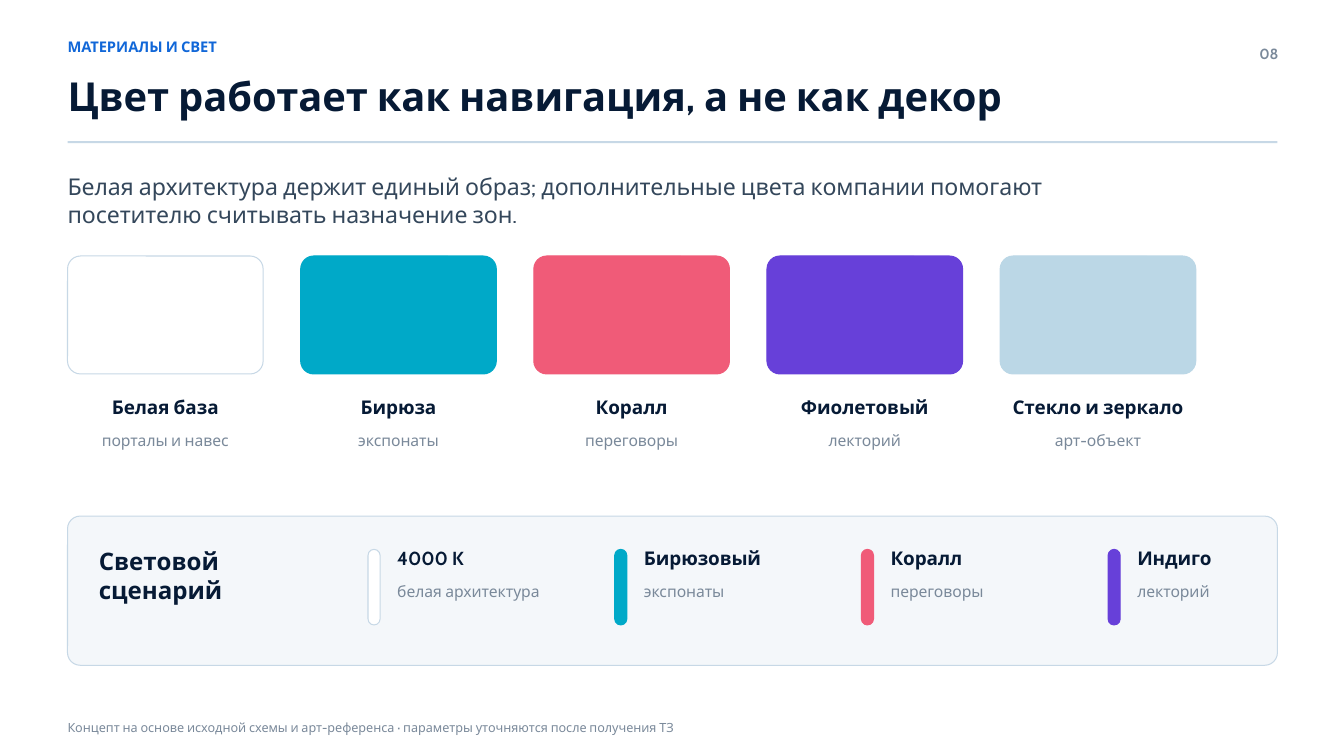
from dataclasses import dataclass

from pptx import Presentation
from pptx.dml.color import RGBColor
from pptx.enum.shapes import MSO_SHAPE
from pptx.enum.text import MSO_ANCHOR, MSO_AUTO_SIZE, PP_ALIGN
from pptx.util import Inches, Pt


@dataclass(frozen=True)
class Theme:
    font: str = "Cabin"
    # Colours
    white: str = "FFFFFF"
    ink: str = "061A35"
    body: str = "34475B"
    muted: str = "7A899A"
    blue: str = "1167D8"
    rule: str = "C7D8E6"
    panel: str = "F4F7FA"
    teal: str = "00A9C8"
    coral: str = "F05B78"
    violet: str = "6740D9"
    glass: str = "BBD7E6"
    # Type sizes
    title: float = 28.5
    lead: float = 16.5
    head: float = 17.2
    name: float = 13.5
    note: float = 11.2
    label: float = 10.5
    foot: float = 9


theme = Theme()
deck = Presentation()
deck.slide_width, deck.slide_height = Inches(13.33), Inches(7.5)
slide = deck.slides.add_slide(deck.slide_layouts[5])
shapes = slide.shapes


def write(text, area, size, color, bold=False, align=PP_ALIGN.LEFT, box=None):
    left, top, width, height = map(Inches, area)
    if box is None:
        box = shapes.add_textbox(left, top, width, height)
    else:
        box.left, box.top, box.width, box.height = left, top, width, height
    frame = box.text_frame
    frame.text = text
    frame.word_wrap = True
    frame.auto_size = MSO_AUTO_SIZE.NONE
    frame.vertical_anchor = MSO_ANCHOR.TOP
    frame.margin_left = frame.margin_right = 0
    frame.margin_top = frame.margin_bottom = 0
    line = frame.paragraphs[0]
    line.alignment = align
    line.font.name = theme.font
    line.font.size = Pt(size)
    line.font.bold = bold
    line.font.color.rgb = RGBColor.from_string(color)
    return frame


def draw(area, fill, edge=None, weight=0.75, curve=None):
    kind = MSO_SHAPE.RECTANGLE if curve is None else MSO_SHAPE.ROUNDED_RECTANGLE
    shape = shapes.add_shape(kind, *map(Inches, area))
    shape.shadow.inherit = False
    shape.fill.solid()
    shape.fill.fore_color.rgb = RGBColor.from_string(fill)
    if curve is not None:
        shape.adjustments[0] = curve
    if edge is None:
        shape.line.fill.background()
    else:
        shape.line.color.rgb = RGBColor.from_string(edge)
        shape.line.width = Pt(weight)


# Header
edge, span = 0.67, 12
write("МАТЕРИАЛЫ И СВЕТ", (edge, 0.38, 7.29, 0.23), theme.label, theme.blue, True)
write("Цвет работает как навигация, а не как декор", (edge, 0.71, 11.25, 0.6),
      theme.title, theme.ink, True, box=shapes.title)
write("08", (12.24, 0.44, 0.44, 0.25), theme.label, theme.muted, True, PP_ALIGN.RIGHT)
draw((edge, 1.4, span, 0.02), theme.rule)
write("Белая архитектура держит единый образ; дополнительные цвета компании "
      "помогают посетителю считывать назначение зон.",
      (edge, 1.71, 10, 0.44), theme.lead, theme.body)

# Colour swatches
swatches = [
    ("Белая база", "порталы и навес", theme.white, theme.rule),
    ("Бирюза", "экспонаты", theme.teal, theme.teal),
    ("Коралл", "переговоры", theme.coral, theme.coral),
    ("Фиолетовый", "лекторий", theme.violet, theme.violet),
    ("Стекло и зеркало", "арт-объект", theme.glass, theme.glass),
]
wide = 1.94
step = 9.25 / (len(swatches) - 1)
for i, (name, use, fill, line) in enumerate(swatches):
    x = edge + i * step
    draw((x, 2.54, wide, 1.17), fill, line, curve=0.11)
    write(name, (x, 3.92, wide, 0.31), theme.name, theme.ink, True, PP_ALIGN.CENTER)
    write(use, (x, 4.27, wide, 0.38), theme.note, theme.muted, align=PP_ALIGN.CENTER)

# Light scenario panel
draw((edge, 5.12, span, 1.48), theme.panel, theme.rule, curve=0.085)
write("Световой сценарий", (0.98, 5.42, 2.29, 0.35), theme.head, theme.ink, True)
lights = [
    ("4000 K", "белая архитектура", theme.white, theme.rule, 0.75),
    ("Бирюзовый", "экспонаты", theme.teal, theme.teal, 0),
    ("Коралл", "переговоры", theme.coral, theme.coral, 0),
    ("Индиго", "лекторий", theme.violet, theme.violet, 0),
]
step = 7.34 / (len(lights) - 1)
for i, (name, use, fill, line, weight) in enumerate(lights):
    x = 3.65 + i * step
    draw((x, 5.45, 0.12, 0.75), fill, line, weight, curve=0.5)
    write(name, (x + 0.29, 5.42, 1.56, 0.29), theme.name, theme.ink, True)
    write(use, (x + 0.29, 5.77, 1.56, 0.44), theme.note, theme.muted)

# Footer
foot = write("Концепт на основе исходной схемы и арт-референса · "
             "параметры уточняются после получения ТЗ",
             (edge, 7.12, span, 0.19), theme.foot, theme.muted)
foot.vertical_anchor = MSO_ANCHOR.MIDDLE

deck.save("out.pptx")
